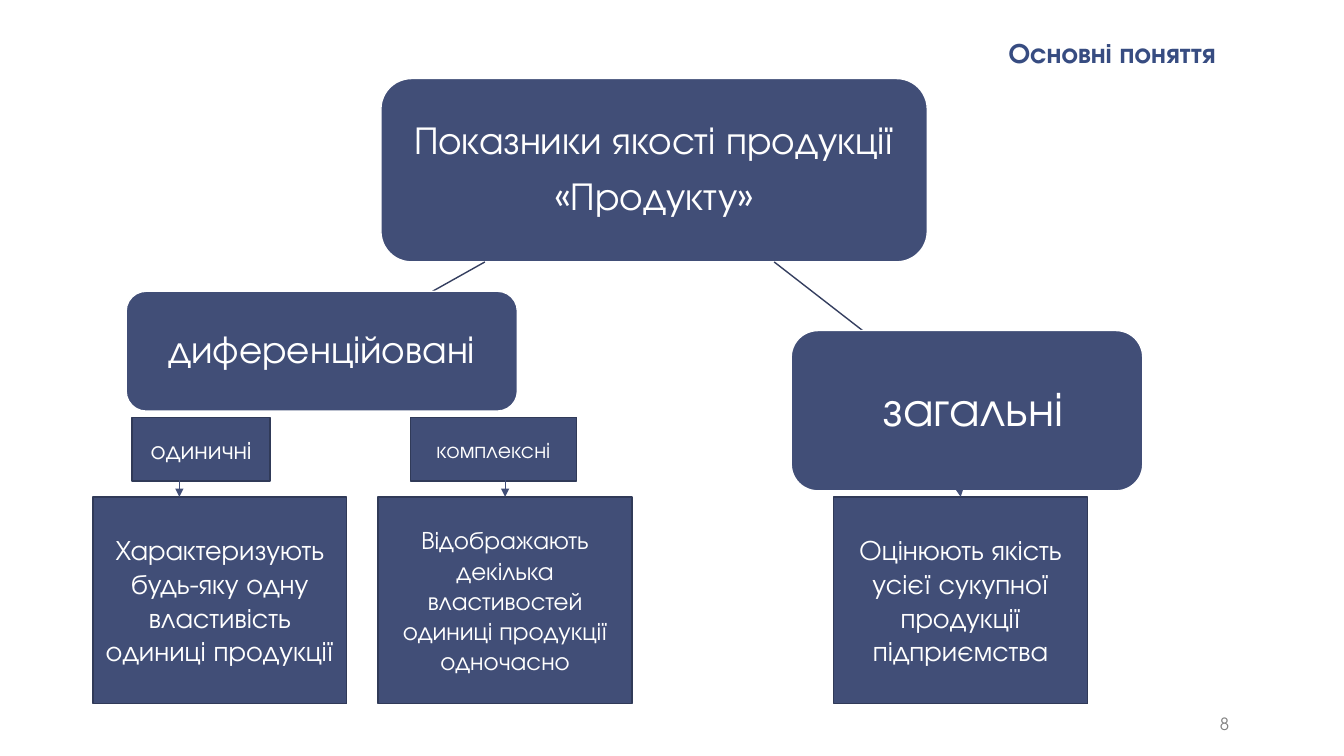
from lxml import etree
from pptx import Presentation
from pptx.dml.color import RGBColor
from pptx.enum import shapes as sh, text as tx
from pptx.oxml.ns import qn
from pptx.util import Cm, Pt

FONT = "TeX Gyre Adventor"
NAVY = RGBColor(0x41, 0x4E, 0x77)
EDGE = RGBColor(0x30, 0x3A, 0x58)
LINK = RGBColor(0x34, 0x3E, 0x5F)
HEAD = RGBColor(0x37, 0x4C, 0x81)
GREY = RGBColor(0x80, 0x80, 0x80)
WHITE = RGBColor(255, 255, 255)
ROUND = sh.MSO_SHAPE.ROUNDED_RECTANGLE
PROCESS = sh.MSO_SHAPE.FLOWCHART_PROCESS
CENTER, RIGHT = tx.PP_ALIGN.CENTER, tx.PP_ALIGN.RIGHT
MIDDLE, BOTTOM = tx.MSO_ANCHOR.MIDDLE, tx.MSO_ANCHOR.BOTTOM


def write(frame, lines, size, color, align=CENTER, anchor=MIDDLE, pad=(0.25, 0.13),
          bold=False, ratio=1.0, after=0):
    """Fill a text frame, one paragraph per line; pad is (sides, top and bottom) in cm."""
    frame.word_wrap = True
    frame.auto_size = tx.MSO_AUTO_SIZE.NONE
    frame.vertical_anchor = anchor
    frame.margin_left = frame.margin_right = Cm(pad[0])
    frame.margin_top = frame.margin_bottom = Cm(pad[1])
    for i, line in enumerate(lines):
        para = frame.add_paragraph() if i else frame.paragraphs[0]
        para.alignment = align
        para.line_spacing = ratio
        para.space_before, para.space_after = Pt(0), Pt(after)
        run = para.add_run()
        run.text = line
        font = run.font
        font.name, font.size, font.bold = FONT, Pt(size), bold
        font.color.rgb = color


def block(slide, kind, box, edge):
    shape = slide.shapes.add_shape(kind, *map(Cm, box))
    shape.shadow.inherit = False
    shape.fill.solid()
    shape.fill.fore_color.rgb = NAVY
    shape.line.color.rgb = edge
    shape.line.width = Pt(1)
    return shape


def node(slide, box, lines, size):
    shape = block(slide, ROUND, box, WHITE)
    write(shape.text_frame, lines, size, WHITE, pad=(0.2, 0.2), ratio=0.9, after=0.35 * size)
    return shape


def card(slide, box, line, size):
    write(block(slide, PROCESS, box, EDGE).text_frame, [line], size, WHITE)


def link(slide, start, end, color, width, arrow=False):
    line = slide.shapes.add_connector(sh.MSO_CONNECTOR.STRAIGHT, *map(Cm, start + end))
    line.line.color.rgb = color
    line.line.width = Pt(width)
    props = line._element.spPr
    if arrow:
        etree.SubElement(props.find(qn("a:ln")), qn("a:tailEnd"), type="triangle")
    etree.SubElement(props, qn("a:effectLst"))


def root(slide, box):
    """Draw the top node and the links to its two branches."""
    x, y, w, h = box
    node(slide, box, ["Показники якості продукції", "«Продукту»"], 28)
    base = y + h
    link(slide, (x + 9.91, base), (x + 12.14, base + 1.73), LINK, 1)
    link(slide, (x + 2.62, base), (x + 1.3, base + 0.74), LINK, 1)


def single(slide, box):
    """Draw the branch of differentiated indicators with its two kinds."""
    x, y, w, h = box
    node(slide, box, ["диференційовані"], 28)
    kinds = [
        (-0.84, 0.15, 3.48, 1.34, "одиничні", 18,
         "Характеризують будь-яку одну властивість одиниці продукції", 20),
        (6.35, 7.16, 4.19, 9.55, "комплексні", 16,
         "Відображають декілька властивостей одиниці продукції одночасно", 18),
    ]
    for left, inner, wide, stem, name, small, about, size in kinds:
        card(slide, (x + left, y + 5.18, 6.4, 5.21), about, size)
        card(slide, (x + inner, y + 3.18, wide, 1.6), name, small)
        link(slide, (x + stem, y + 4.57), (x + stem, y + 5.18), NAVY, 0.5, True)


def general(slide, box):
    """Draw the branch of general indicators."""
    x, y, w, h = box
    shape = node(slide, box, ["загальні"], 35)
    shape.text_frame.margin_left = Cm(0.5)
    card(slide, (x + 1.07, y + 4.19, 6.4, 5.21),
         "Оцінюють якість усієї сукупної продукції підприємства", 20)
    link(slide, (x + 4.19, y + 3.61), (x + 4.27, y + 4.19), NAVY, 0.5, True)


def title(slide, box):
    head = slide.shapes.title
    head.left, head.top, head.width, head.height = map(Cm, box)
    write(head.text_frame, ["Основні поняття"], 20, HEAD, anchor=BOTTOM,
          pad=(0.33, 0.18), bold=True, ratio=0.85)


def number(slide, box):
    label = slide.shapes.add_textbox(*map(Cm, box))
    write(label.text_frame, ["8"], 12, GREY, RIGHT, BOTTOM, (0.33, 0.18))


def main():
    deck = Presentation()
    deck.slide_width, deck.slide_height = Cm(33.87), Cm(19.05)
    slide = deck.slides.add_slide(deck.slide_layouts[5])
    slide.background.fill.solid()
    slide.background.fill.fore_color.rgb = WHITE
    root(slide, (9.6, 1.98, 13.77, 4.62))
    general(slide, (19.94, 8.33, 8.86, 4.04))
    single(slide, (3.18, 7.34, 9.86, 3.02))
    number(slide, (28.24, 17.78, 3.07, 0.89))
    title(slide, (24.74, -1.68, 6.58, 3.61))
    deck.save("out.pptx")


if __name__ == "__main__":
    main()
